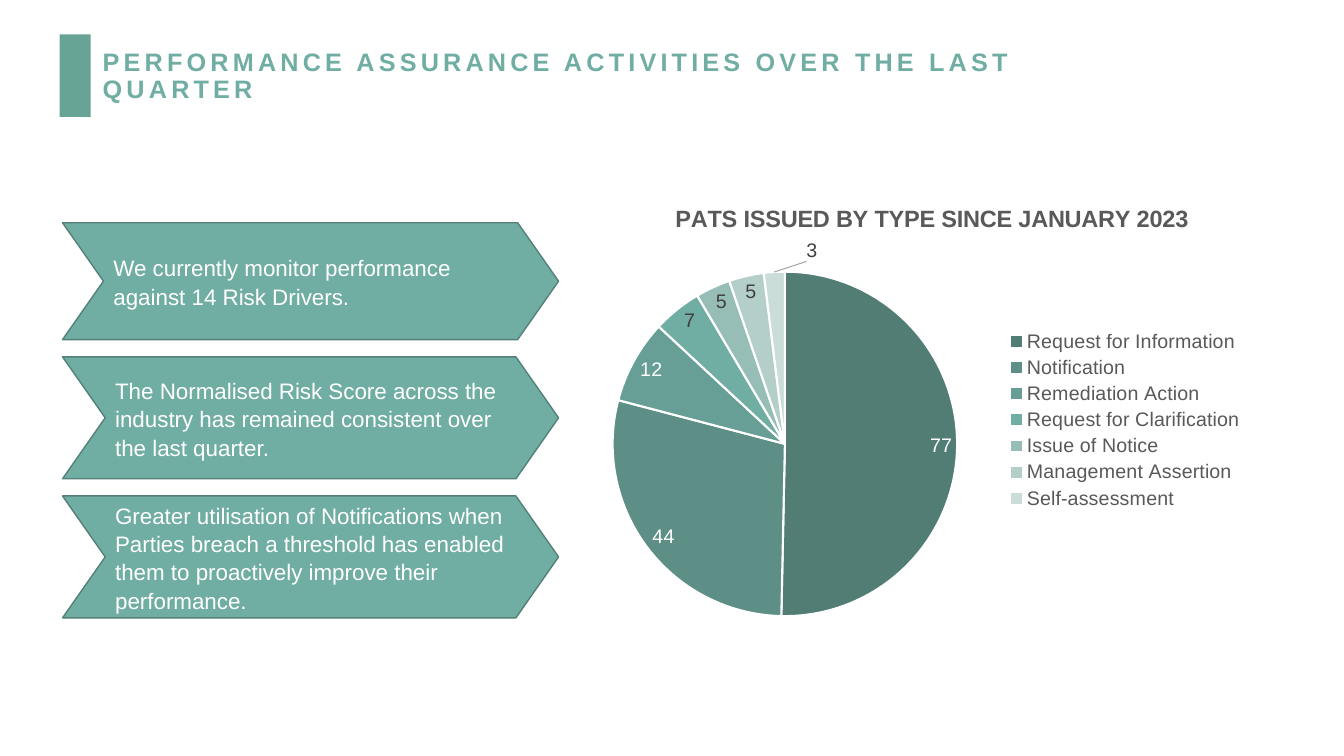
from lxml import etree
from pptx import Presentation
from pptx.chart.data import CategoryChartData
from pptx.dml.color import RGBColor
from pptx.enum.chart import XL_CHART_TYPE, XL_LABEL_POSITION as LABEL_POS, XL_LEGEND_POSITION as LEGEND_POS
from pptx.enum.shapes import MSO_SHAPE as SHAPE
from pptx.enum.text import MSO_ANCHOR, PP_ALIGN
from pptx.oxml import parse_xml
from pptx.oxml.ns import nsdecls, qn
from pptx.util import Pt

PX = 9144
FONT = "Arial"
WHITE = RGBColor(0xFF, 0xFF, 0xFF)
BAR = RGBColor(0x68, 0xA4, 0x95)
TEAL = RGBColor(0x70, 0xAD, 0xA3)
EDGE = RGBColor(0x53, 0x80, 0x79)
GREY = RGBColor(0x59, 0x59, 0x59)
DARK = RGBColor(0x40, 0x40, 0x40)

TITLE = "PERFORMANCE ASSURANCE ACTIVITIES OVER THE LAST QUARTER"
MESSAGES = [
    ("We currently monitor performance against 14 Risk Drivers.", 116),
    ("The Normalised Risk Score across the industry has remained consistent over the last quarter.", 121),
    ("Greater utilisation of Notifications when Parties breach a threshold has enabled "
     "them to proactively improve their performance.", 121),
]
CHART_TITLE = "PATS ISSUED BY TYPE SINCE JANUARY 2023"
PATS = [
    ("Request for Information", 77, RGBColor(0x51, 0x7D, 0x75), WHITE),
    ("Notification", 44, RGBColor(0x5D, 0x8F, 0x87), WHITE),
    ("Remediation Action", 12, RGBColor(0x67, 0x9F, 0x96), WHITE),
    ("Request for Clarification", 7, TEAL, DARK),
    ("Issue of Notice", 5, RGBColor(0x96, 0xBE, 0xB7), DARK),
    ("Management Assertion", 5, RGBColor(0xB4, 0xCF, 0xCA), DARK),
    ("Self-assessment", 3, RGBColor(0xCB, 0xDD, 0xD9), DARK),
]


def px(*lengths):
    return [n * PX for n in lengths]


def set_font(font, size, color, bold=False):
    font.name, font.size, font.bold = FONT, Pt(size), bold
    font.color.rgb = color


def write(tf, text, size=16, color=WHITE, bold=False, leading=1.0, tracking=0):
    tf.word_wrap = True
    tf.vertical_anchor = MSO_ANCHOR.MIDDLE
    p = tf.paragraphs[0]
    p.alignment = PP_ALIGN.LEFT
    p.line_spacing = leading
    r = p.add_run()
    r.text = text
    set_font(r.font, size, color, bold)
    if tracking:
        r.font._element.set("spc", str(tracking * 100))


def add_block(s, kind, box, fill, line=None):
    sp = s.shapes.add_shape(kind, *px(*box))
    sp.shadow.inherit = False
    sp.fill.solid()
    sp.fill.fore_color.rgb = fill
    if line is None:
        sp.line.fill.background()
    else:
        sp.line.color.rgb = line
        sp.line.width = Pt(1)
    return sp


def add_header(s, x, y, w, h):
    add_block(s, SHAPE.RECTANGLE, (x, y, 31, h), BAR)
    tb = s.shapes.add_textbox(*px(x + 33, y + 6, w - 33, h - 10))
    write(tb.text_frame, TITLE, size=18, color=TEAL, bold=True, leading=0.9, tracking=3)


def add_messages(s, x, y, w, gap):
    for text, h in MESSAGES:
        sp = add_block(s, SHAPE.CHEVRON, (x, y, w, h), TEAL, EDGE)
        sp.adjustments[0] = 0.35
        tf = sp.text_frame
        tf.margin_left, tf.margin_top, tf.margin_right, tf.margin_bottom = px(10, 10, 10, 10)
        write(tf, text, leading=1.06)
        y += h + gap


def set_layout(parent, index, **values):
    for old in parent.findall(qn("c:layout")):
        parent.remove(old)
    layout = parse_xml(f"<c:layout {nsdecls('c')}><c:manualLayout/></c:layout>")
    for tag, value in values.items():
        etree.SubElement(layout[0], qn(f"c:{tag}")).set("val", str(value))
    parent.insert(index, layout)


def add_pats_chart(s, x, y, w, h):
    data = CategoryChartData()
    data.categories = [name for name, *_ in PATS]
    data.add_series("Series 1", [value for _, value, *_ in PATS])
    chart = s.shapes.add_chart(XL_CHART_TYPE.PIE, *px(x, y, w, h), data).chart
    chart.font.name, chart.font.size = FONT, Pt(14)

    chart.has_title = True
    title = chart.chart_title
    r = title.text_frame.paragraphs[0].add_run()
    r.text = CHART_TITLE
    set_font(r.font, 16.8, GREY, True)
    set_layout(title._element, 1, xMode="edge", yMode="edge", x=0.24, y=0.03)

    chart.has_legend = True
    legend = chart.legend
    legend.position = LEGEND_POS.RIGHT
    legend.include_in_layout = False
    set_font(legend.font, 14, GREY)
    set_layout(legend._element, 1, xMode="edge", yMode="edge", x=0.68, y=0.3, w=0.31, h=0.4)

    plot = chart.plots[0]
    plot.vary_by_categories = True
    set_layout(chart._chartSpace.chart.plotArea, 0, layoutTarget="inner",
               xMode="edge", yMode="edge", x=0.163, y=0.184, w=0.452, h=0.735)

    series = plot.series[0]
    labels = series.data_labels
    labels.show_value = True
    labels.position = LABEL_POS.BEST_FIT
    set_font(labels.font, 14, DARK)
    for i, (_, _, fill, ink) in enumerate(PATS):
        point = series.points[i]
        point.format.fill.solid()
        point.format.fill.fore_color.rgb = fill
        point.format.line.color.rgb = WHITE
        point.format.line.width = Pt(1.5)
        set_font(point.data_label.font, 14, ink)
        point.data_label.position = LABEL_POS.BEST_FIT
    last_label = labels._element.findall(qn("c:dLbl"))[-1]
    set_layout(last_label, 1, x=0.05, y=-0.01)
    labels._element.append(parse_xml(
        f"<c:leaderLines {nsdecls('c', 'a')}><c:spPr><a:ln w='9525'><a:solidFill>"
        "<a:srgbClr val='A6A6A6'/></a:solidFill></a:ln></c:spPr></c:leaderLines>"))


def main():
    prs = Presentation()
    prs.slide_width, prs.slide_height = px(1333, 750)
    s = prs.slides.add_slide(prs.slide_layouts[6])
    add_header(s, 59, 34, 1048, 82)
    add_messages(s, 62, 221, 492, 17)
    add_pats_chart(s, 484, 184, 757, 465)
    prs.save("out.pptx")


if __name__ == "__main__":
    main()
